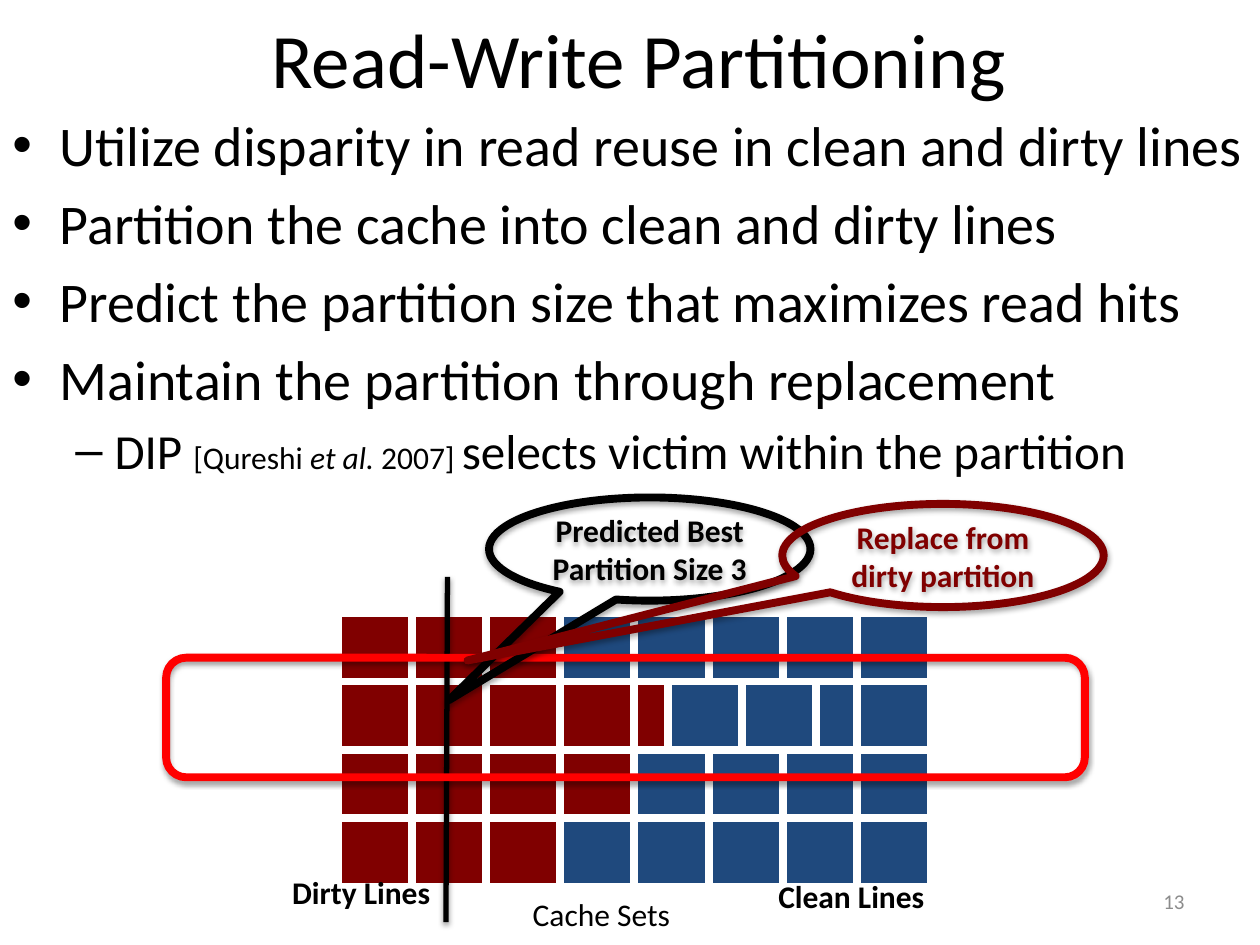
from dataclasses import dataclass
from typing import Optional

from lxml.etree import SubElement
from pptx import Presentation
from pptx.dml.color import RGBColor
from pptx.enum.shapes import MSO_CONNECTOR, MSO_SHAPE
from pptx.enum.text import MSO_ANCHOR as Anchor, PP_ALIGN as Align
from pptx.oxml.ns import qn
from pptx.util import Cm, Pt


@dataclass(frozen=True)
class Theme:
    font: str = "Calibri"
    black: str = "000000"
    white: str = "FFFFFF"
    dirty: str = "800000"
    clean: str = "1F497D"
    highlight: str = "FF0000"
    muted: str = "8C8C8C"
    title: float = 44
    bullet: float = 32
    sub_bullet: float = 28
    label: float = 18
    number: float = 12
    outline: float = 4.5
    divider: float = 3


@dataclass(frozen=True)
class Box:
    left: float
    top: float
    width: float
    height: float

    def lengths(self) -> tuple:
        return Cm(self.left), Cm(self.top), Cm(self.width), Cm(self.height)


@dataclass(frozen=True)
class Run:
    text: str
    size: float
    italic: bool = False


@dataclass(frozen=True)
class Bullet:
    runs: tuple
    mark: str = "•"
    margin: float = 0.95
    hanging: float = 0.95
    gap: float = 6
    level: int = 0


@dataclass(frozen=True)
class Label:
    text: str
    box: Box
    size: float
    color: str = "000000"
    bold: bool = False
    align: Align = Align.LEFT
    anchor: Anchor = Anchor.TOP
    wrap: bool = False


@dataclass(frozen=True)
class Callout:
    text: str
    box: Box
    tip: tuple
    color: str


THEME = Theme()
GRID = Box(6.81, 12.36, 1.495, 1.38)
CACHE_ROWS = ("DDDCCCCC", "DDDDDCCC", "DDDDCCCC", "DDDCCCCC")
CELL_COLORS = {"D": THEME.dirty, "C": THEME.clean}

BULLETS = tuple(
    Bullet((Run(text, THEME.bullet),))
    for text in (
        "Utilize disparity in read reuse in clean and dirty lines",
        "Partition the cache into clean and dirty lines",
        "Predict the partition size that maximizes read hits",
        "Maintain the partition through replacement",
    )
) + (
    Bullet(
        (
            Run("DIP ", THEME.sub_bullet),
            Run("[Qureshi ", THEME.label),
            Run("et al. ", THEME.label, italic=True),
            Run("2007] ", THEME.label),
            Run("selects victim within the partition", THEME.sub_bullet),
        ),
        mark="–", margin=2.06, hanging=0.79, gap=5.2, level=1,
    ),
)

HEADING = Label("Read-Write Partitioning", Box(1.45, -0.43, 22.86, 3.18), THEME.title,
                align=Align.CENTER, anchor=Anchor.MIDDLE, wrap=True)
LABELS = (
    Label("Cache Sets", Box(10.49, 17.91, 3.33, 1.02), THEME.label),
    Label("13", Box(18.21, 17.65, 5.92, 1.02), THEME.number, THEME.muted,
          align=Align.RIGHT, anchor=Anchor.MIDDLE, wrap=True),
    Label("Dirty Lines", Box(5.64, 17.48, 3.33, 1.02), THEME.label, bold=True),
    Label("Clean Lines", Box(15.44, 17.55, 3.48, 1.02), THEME.label, bold=True),
)
PREDICTION = Callout("Predicted Best Partition Size 3", Box(9.86, 10.03, 6.48, 2.08),
                     (-0.625, 1.464), THEME.black)
REPLACEMENT = Callout("Replace from dirty partition", Box(15.77, 10.16, 6.48, 2.08),
                      (-1.479, 1.017), THEME.dirty)


def style_run(run, size: float, color: str, bold: bool = False, italic: bool = False) -> None:
    run.font.name = THEME.font
    run.font.size = Pt(size)
    run.font.color.rgb = RGBColor.from_string(color)
    run.font.bold = bold
    run.font.italic = italic


def fill_text(frame, label: Label) -> None:
    frame.text = label.text
    frame.word_wrap = label.wrap
    frame.vertical_anchor = label.anchor
    frame.paragraphs[0].alignment = label.align
    style_run(frame.paragraphs[0].runs[0], label.size, label.color, label.bold)


def add_label(slide, label: Label) -> None:
    fill_text(slide.shapes.add_textbox(*label.box.lengths()).text_frame, label)


def add_bullets(slide, box: Box, bullets: tuple) -> None:
    frame = slide.shapes.add_textbox(*box.lengths()).text_frame
    frame.word_wrap = True
    for index, bullet in enumerate(bullets):
        paragraph = frame.add_paragraph() if index else frame.paragraphs[0]
        paragraph.level = bullet.level
        paragraph.space_before = Pt(bullet.gap)
        properties = paragraph._p.get_or_add_pPr()
        properties.set("marL", str(Cm(bullet.margin)))
        properties.set("indent", str(-Cm(bullet.hanging)))
        SubElement(properties, qn("a:buFont"), typeface="Arial")
        SubElement(properties, qn("a:buChar"), char=bullet.mark)
        for part in bullet.runs:
            run = paragraph.add_run()
            run.text = part.text
            style_run(run, part.size, THEME.black, italic=part.italic)


def cast_shadow(effects, opacity: int, distance: float) -> None:
    shadow = SubElement(effects, qn("a:outerShdw"), blurRad=str(Pt(3.1)), dist=str(Pt(distance)),
                        dir="5400000", rotWithShape="0")
    color = SubElement(shadow, qn("a:srgbClr"), val=THEME.black)
    SubElement(color, qn("a:alpha"), val=str(opacity * 1000))


def add_outlined(slide, preset: MSO_SHAPE, box: Box, line: str, fill: Optional[str] = None):
    shape = slide.shapes.add_shape(preset, *box.lengths())
    shape.shadow.inherit = False
    shape.line.color.rgb = RGBColor.from_string(line)
    shape.line.width = Pt(THEME.outline)
    if fill:
        shape.fill.solid()
        shape.fill.fore_color.rgb = RGBColor.from_string(fill)
    else:
        shape.fill.background()
        cast_shadow(shape._element.spPr.find(qn("a:effectLst")), 35, 1.8)
    return shape


def add_cell(slide, row: int, column: float, color: str) -> None:
    box = Box(GRID.left + column * GRID.width, GRID.top + row * GRID.height, GRID.width, GRID.height)
    add_outlined(slide, MSO_SHAPE.RECTANGLE, box, THEME.white, color)


def add_callout(slide, callout: Callout) -> None:
    shape = add_outlined(slide, MSO_SHAPE.OVAL_CALLOUT, callout.box, callout.color)
    shape.adjustments[0], shape.adjustments[1] = callout.tip
    fill_text(shape.text_frame, Label(callout.text, callout.box, THEME.label, callout.color, True,
                                      Align.CENTER, Anchor.MIDDLE, True))


def add_divider(slide) -> None:
    divider = slide.shapes.add_connector(MSO_CONNECTOR.STRAIGHT, Cm(9.02), Cm(11.63), Cm(8.99), Cm(18.59))
    divider.line.color.rgb = RGBColor.from_string(THEME.black)
    divider.line.width = Pt(THEME.divider)
    cast_shadow(SubElement(divider._element.spPr, qn("a:effectLst")), 38, 1.6)


def main() -> None:
    deck = Presentation()
    deck.slide_width, deck.slide_height = Cm(25.4), Cm(19.05)
    slide = deck.slides.add_slide(deck.slide_layouts[6])
    add_label(slide, HEADING)
    add_bullets(slide, Box(0, 2.11, 25.4, 6.02), BULLETS)
    for row, states in enumerate(CACHE_ROWS):
        for column, state in enumerate(states):
            add_cell(slide, row, column, CELL_COLORS[state])
    add_divider(slide)
    add_outlined(slide, MSO_SHAPE.ROUNDED_RECTANGLE, Box(3.35, 13.26, 18.52, 2.41), THEME.highlight)
    add_cell(slide, 1, 5.45, THEME.clean)
    for label in LABELS:
        add_label(slide, label)
    add_callout(slide, PREDICTION)
    add_cell(slide, 1, 4.45, THEME.clean)
    add_callout(slide, REPLACEMENT)
    deck.save("out.pptx")


if __name__ == "__main__":
    main()
